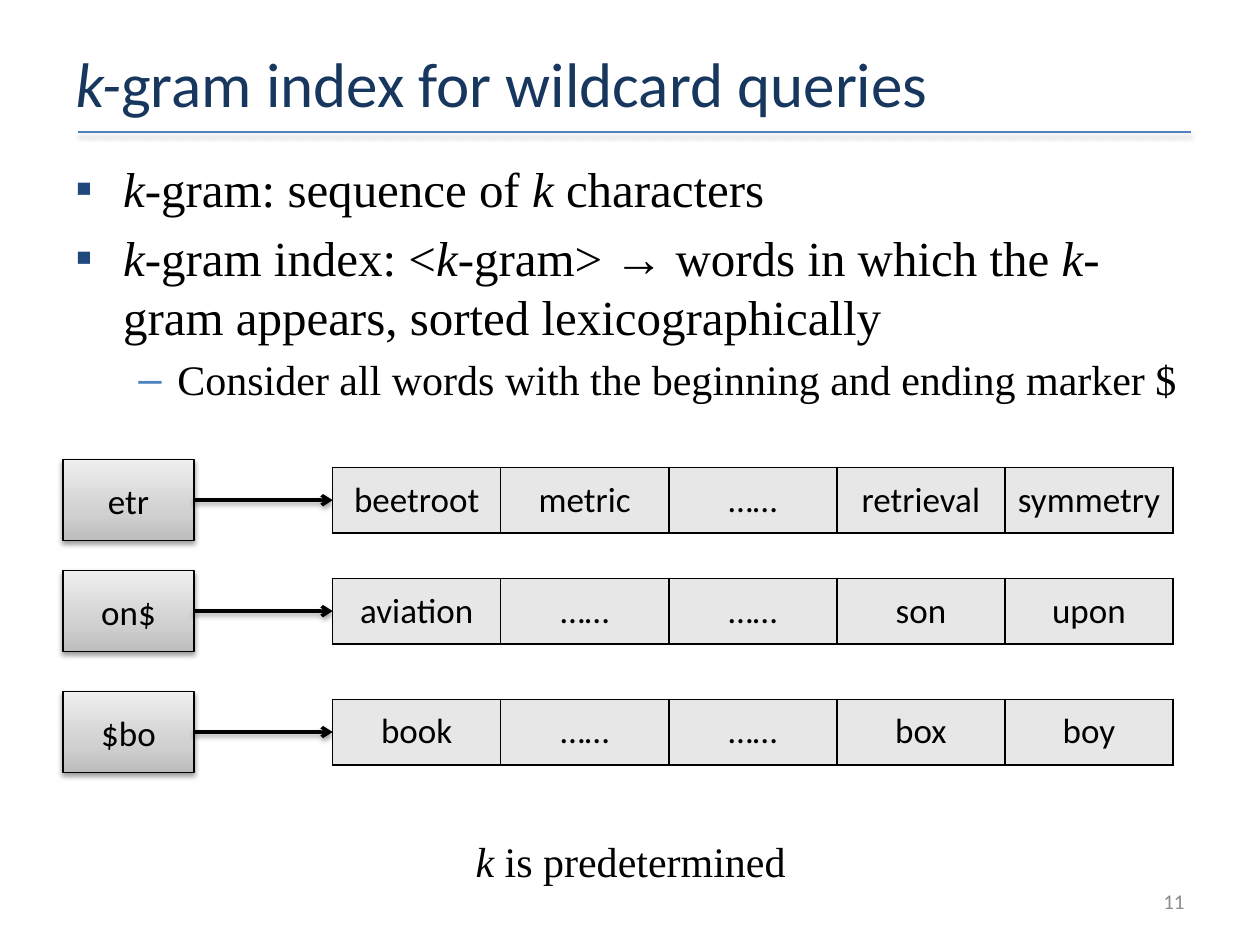
from lxml.etree import SubElement
from pptx import Presentation
from pptx.dml.color import RGBColor
from pptx.enum.shapes import MSO_CONNECTOR, MSO_SHAPE
from pptx.enum.text import MSO_ANCHOR, PP_ALIGN
from pptx.oxml import parse_xml
from pptx.oxml.ns import nsdecls, qn
from pptx.util import Inches, Pt

COLORS = {
    "title": "17375E",
    "text": "000000",
    "bullet": "1F497D",
    "accent": "4F81BD",
    "number": "8C8C8C",
    "cell": "E7E7E7",
    "dark": "BDBDBD",
    "middle": "D1D1D1",
    "light": "EEEEEE",
}
SERIF = "Times New Roman"
POSTINGS = [
    (3.65, "etr", ["beetroot", "metric", "……", "retrieval", "symmetry"]),
    (4.53, "on$", ["aviation", "……", "……", "son", "upon"]),
    (5.49, "$bo", ["book", "……", "……", "box", "boy"]),
]
BULLETS = [
    ("*k-*gram: sequence of *k *characters", 0, 28, 0.38, 0.38, "▪", "bullet"),
    ("*k-*gram index: <*k-*gram> → words in which the *k-*gram appears, "
     "sorted lexicographically", 0, 28, 0.38, 0.38, "▪", "bullet"),
    ("Consider all words with the beginning and ending marker $",
     1, 24, 0.81, 0.31, "–", "accent"),
]


def rgb(name):
    """Return the named colour."""
    return RGBColor.from_string(COLORS[name])


def write(para, text, size=20, font="Calibri", color="text", align=PP_ALIGN.CENTER):
    """Fill a paragraph, setting the parts between asterisks in italics."""
    para.alignment = align
    for index, part in enumerate(text.split("*")):
        if part:
            span = para.add_run()
            span.text = part
            span.font.size = Pt(size)
            span.font.name = font
            span.font.italic = index % 2 == 1
            span.font.color.rgb = rgb(color)


def add_shadow(shape):
    """Give a shape or connector a soft shadow below it."""
    shape._element.spPr.append(parse_xml(
        f'<a:effectLst {nsdecls("a")}>'
        '<a:outerShdw blurRad="39370" dist="20320" dir="5400000" rotWithShape="0">'
        '<a:srgbClr val="000000"><a:alpha val="38000"/></a:srgbClr>'
        '</a:outerShdw></a:effectLst>'))


def add_line(page, left, right, top, color, width, arrow=False):
    """Add a horizontal line with an optional arrowhead."""
    line = page.shapes.add_connector(
        MSO_CONNECTOR.STRAIGHT, Inches(left), Inches(top), Inches(right), Inches(top))
    line.line.color.rgb = rgb(color)
    line.line.width = Pt(width)
    if arrow:
        SubElement(line.line._get_or_add_ln(), qn("a:tailEnd"), type="arrow")
    add_shadow(line)


def add_text(page, left, top, width, height, anchor=MSO_ANCHOR.TOP):
    """Add a wrapping text box and return its frame."""
    box = page.shapes.add_textbox(
        Inches(left), Inches(top), Inches(width), Inches(height))
    frame = box.text_frame
    frame.word_wrap = True
    frame.vertical_anchor = anchor
    return frame


def add_title(page, text):
    """Place and format the title placeholder."""
    title = page.shapes.title
    title.left, title.top = Inches(0.5), Inches(0.3)
    title.width, title.height = Inches(9), Inches(0.71)
    title.text_frame.vertical_anchor = MSO_ANCHOR.MIDDLE
    write(title.text_frame.paragraphs[0], text, size=36, color="title",
          align=PP_ALIGN.LEFT)


def add_bullets(page):
    """Add the bulleted definitions."""
    frame = add_text(page, 0.5, 1.21, 9, 2.25)
    for index, (text, level, size, margin, hang, mark, color) in enumerate(BULLETS):
        para = frame.add_paragraph() if index else frame.paragraphs[0]
        para.level = level
        para.space_before = Pt(round(size * 0.2, 1))
        write(para, text, size=size, font=SERIF, align=PP_ALIGN.LEFT)
        properties = para._p.get_or_add_pPr()
        properties.set("marL", str(Inches(margin)))
        properties.set("indent", str(-Inches(hang)))
        bullet_color = SubElement(properties, qn("a:buClr"))
        SubElement(bullet_color, qn("a:srgbClr"), val=COLORS[color])
        SubElement(properties, qn("a:buFont"), typeface="Arial")
        SubElement(properties, qn("a:buChar"), char=mark)


def add_gram(page, top, text):
    """Add a gradient box that holds one k-gram."""
    box = page.shapes.add_shape(
        MSO_SHAPE.RECTANGLE, Inches(0.5), Inches(top), Inches(1.04), Inches(0.64))
    stops = "".join(
        f'<a:gs pos="{position}000"><a:srgbClr val="{COLORS[name]}"/></a:gs>'
        for position, name in [(0, "dark"), (35, "middle"), (100, "light")])
    box._element.spPr.insert(2, parse_xml(
        f'<a:gradFill {nsdecls("a")} rotWithShape="1"><a:gsLst>{stops}</a:gsLst>'
        '<a:lin ang="16200000" scaled="0"/></a:gradFill>'))
    box.line.color.rgb = rgb("text")
    box.line.width = Pt(0.75)
    add_shadow(box)
    box.text_frame.vertical_anchor = MSO_ANCHOR.MIDDLE
    write(box.text_frame.paragraphs[0], text)


def add_borders(cell):
    """Draw a thin dark line on every side of a cell."""
    properties = cell._tc.get_or_add_tcPr()
    for index, side in enumerate(["lnL", "lnR", "lnT", "lnB"]):
        properties.insert(index, parse_xml(
            f'<a:{side} {nsdecls("a")} w="12700"><a:solidFill>'
            f'<a:srgbClr val="{COLORS["text"]}"/></a:solidFill></a:{side}>'))


def add_words(page, top, words):
    """Add the one-row table of words that contain a k-gram."""
    table = page.shapes.add_table(
        1, len(words), Inches(2.64), Inches(top), Inches(6.67), Inches(0.52)).table
    table.first_row = False
    table.horz_banding = False
    for cell, word in zip(table.rows[0].cells, words):
        cell.fill.solid()
        cell.fill.fore_color.rgb = rgb("cell")
        cell.margin_left = cell.margin_right = Inches(0.05)
        cell.vertical_anchor = MSO_ANCHOR.MIDDLE
        write(cell.text_frame.paragraphs[0], word)
        add_borders(cell)


def main():
    """Build the slide and save the deck."""
    deck = Presentation()
    deck.slide_width, deck.slide_height = Inches(10), Inches(7.5)
    page = deck.slides.add_slide(deck.slide_layouts[5])
    add_line(page, 0.62, 9.45, 1.05, "accent", 1)
    add_title(page, "*k-*gram index for wildcard queries")
    add_bullets(page)
    number = add_text(page, 7.17, 6.95, 2.33, 0.4, anchor=MSO_ANCHOR.MIDDLE)
    write(number.paragraphs[0], "11", size=12, color="number", align=PP_ALIGN.RIGHT)
    for top, gram, words in POSTINGS:
        add_gram(page, top, gram)
        add_line(page, 1.54, 2.64, top + 0.32, "text", 2, arrow=True)
        add_words(page, top + 0.06, words)
    note = add_text(page, 2.01, 6.58, 5.99, 0.5)
    write(note.paragraphs[0], "*k *is predetermined", size=24, font=SERIF)
    deck.save("out.pptx")


if __name__ == "__main__":
    main()
